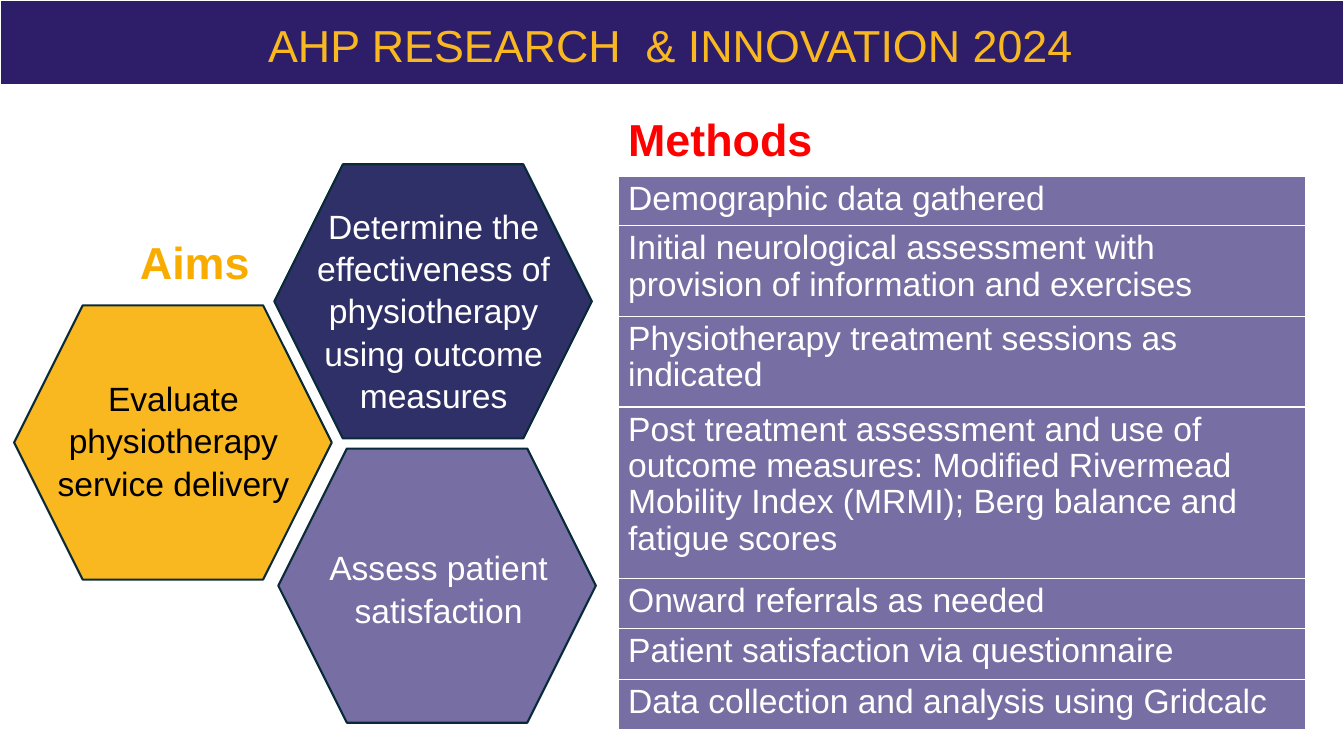
from pptx import Presentation
from pptx.dml.color import RGBColor
from pptx.enum.shapes import MSO_SHAPE
from pptx.enum.text import PP_ALIGN
from pptx.util import Inches, Pt

COLORS = {
    "white": "FFFFFF", "black": "000000", "red": "FF0000",
    "gold": "F9B820", "amber": "F9AC00", "violet": "776EA3",
    "navy": "303068", "indigo": "2E1E69", "edge": "092A39",
}
BODY = {"name": "Arial", "size": Pt(24), "bold": False}
HEAD = {"name": "Arial", "size": Pt(32), "bold": True}
TITLE = {**HEAD, "bold": False}

# hexagon left and top, fill, text box, text, text colour
AIMS = [
    (2.76, 4.45, "violet", (2.83, 5.36, 3.04, 0.91),
     "Assess patient satisfaction", "white"),
    (2.72, 1.63, "navy", (2.94, 1.97, 2.72, 2.12),
     "Determine the effectiveness of physiotherapy using outcome measures",
     "white"),
    (0.14, 3.03, "gold", (0.45, 3.68, 2.54, 1.31),
     "Evaluate physiotherapy service delivery", "black"),
]
METHODS = [
    ("Methods", 0.65),
    ("Demographic data gathered", 0.48),
    ("Initial neurological assessment with provision of information "
     "and exercises", 0.9),
    ("Physiotherapy treatment sessions as indicated", 0.9),
    ("Post treatment assessment and use of outcome measures: Modified "
     "Rivermead Mobility Index (MRMI); Berg balance and fatigue scores", 1.7),
    ("Onward referrals as needed", 0.5),
    ("Patient satisfaction via questionnaire", 0.5),
    ("Data collection and analysis using Gridcalc", 0.5),
]


def color(name):
    return RGBColor.from_string(COLORS[name])


def paint(item, fill):
    item.fill.solid()
    item.fill.fore_color.rgb = color(fill)


def write(frame, text, style, ink, space, align=PP_ALIGN.LEFT):
    """Fill a text frame with one styled paragraph."""
    frame.word_wrap = True
    para = frame.paragraphs[0]
    para.alignment = align
    para.line_spacing = space
    run = para.add_run()
    run.text = text
    for key, value in style.items():
        setattr(run.font, key, value)
    run.font.color.rgb = color(ink)


def add_block(slide, kind, box, fill, edge):
    block = slide.shapes.add_shape(kind, *map(Inches, box))
    block.shadow.inherit = False
    paint(block, fill)
    block.line.color.rgb = color(edge)
    block.line.width = Pt(1.5)


def add_label(slide, box, *words):
    label = slide.shapes.add_textbox(*map(Inches, box))
    write(label.text_frame, *words)


def add_methods(slide):
    frame = slide.shapes.add_table(
        len(METHODS), 1, Inches(6.13), Inches(1.1), Inches(6.82), Inches(6.13))
    table = frame.table
    for index, (text, height) in enumerate(METHODS):
        table.rows[index].height = Inches(height)
        cell = table.cell(index, 0)
        if index == 0:
            paint(cell, "white")
            write(cell.text_frame, text, HEAD, "red", 1.0)
        else:
            paint(cell, "violet")
            write(cell.text_frame, text, BODY, "white", 0.97)


def main():
    deck = Presentation()
    deck.slide_width, deck.slide_height = Inches(13.33), Inches(7.5)
    slide = deck.slides.add_slide(deck.slide_layouts[6])
    for left, top, fill, *_ in AIMS:
        add_block(slide, MSO_SHAPE.HEXAGON, (left, top, 3.15, 2.72),
                  fill, "edge")
    add_label(slide, (1.29, 2.25, 8.73, 0.64), "Aims", HEAD, "amber", 1.05)
    for *_, box, text, ink in AIMS:
        add_label(slide, box, text, BODY, ink, 1.05, PP_ALIGN.CENTER)
    add_methods(slide)
    add_block(slide, MSO_SHAPE.RECTANGLE, (0, 0, 13.33, 0.84),
              "indigo", "white")
    add_label(slide, (2.56, 0.1, 8.21, 0.64),
              "AHP RESEARCH  & INNOVATION 2024", TITLE, "gold", 1.05)
    deck.save("out.pptx")


if __name__ == "__main__":
    main()
